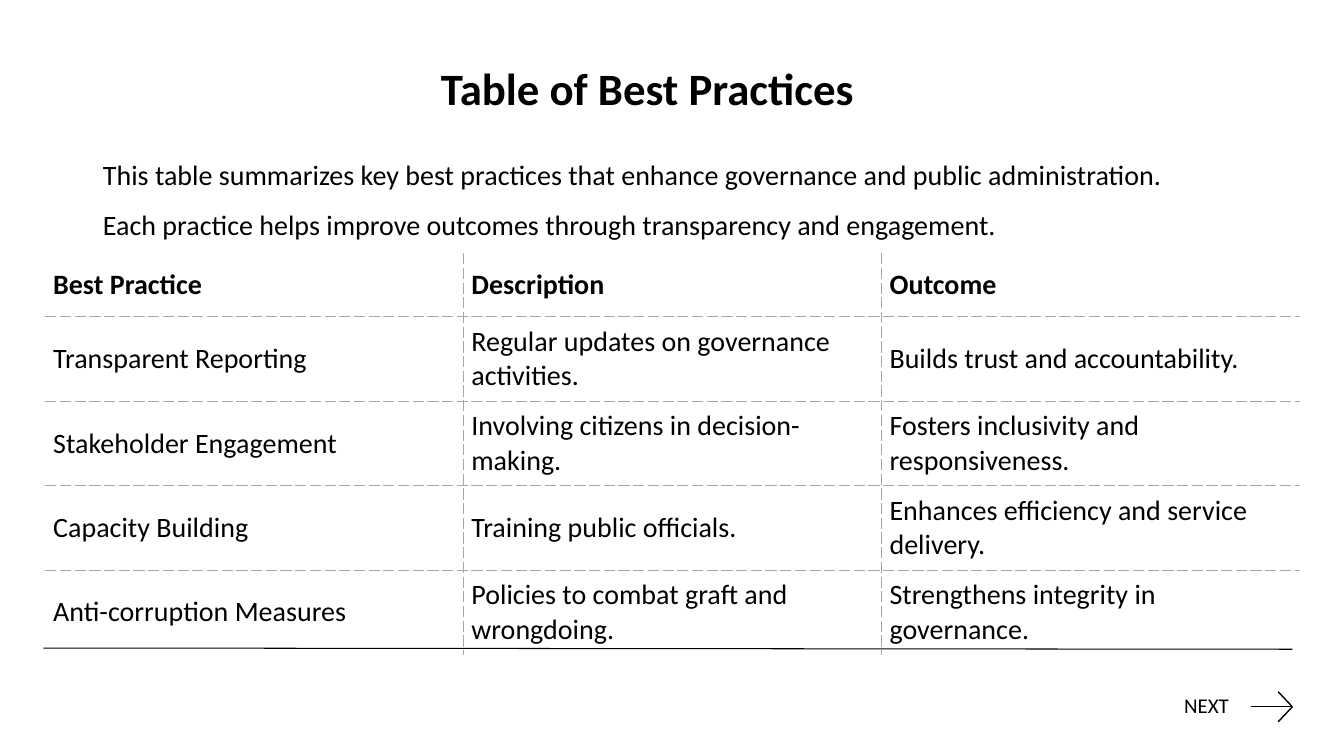
from lxml.etree import SubElement
from pptx import Presentation
from pptx.dml.color import RGBColor
from pptx.enum.shapes import MSO_CONNECTOR
from pptx.enum.text import MSO_ANCHOR, MSO_AUTO_SIZE, PP_ALIGN
from pptx.oxml.ns import qn
from pptx.util import Cm, Pt

BLACK = RGBColor(0x00, 0x00, 0x00)
GREY = RGBColor(0xA6, 0xA6, 0xA6)
FONT = "Calibri"

TITLE = "Table of Best Practices"
INTRODUCTION = [
    "This table summarizes key best practices that enhance governance and public administration.",
    "Each practice helps improve outcomes through transparency and engagement.",
]
PRACTICES = [
    ("Best Practice", "Description", "Outcome"),
    ("Transparent Reporting", "Regular updates on governance activities.",
     "Builds trust and accountability."),
    ("Stakeholder Engagement", "Involving citizens in decision-making.",
     "Fosters inclusivity and responsiveness."),
    ("Capacity Building", "Training public officials.",
     "Enhances efficiency and service delivery."),
    ("Anti-corruption Measures", "Policies to combat graft and wrongdoing.",
     "Strengthens integrity in governance."),
]
COLUMN_WIDTH = Cm(10.54)
HEADER_HEIGHT = Cm(1.6)
ROW_HEIGHT = Cm(2.11)
CELL_MARGIN = Cm(0.2)


def format_text(text_frame, size, bold=False):
    for paragraph in text_frame.paragraphs:
        for run in paragraph.runs:
            run.font.name = FONT
            run.font.size = Pt(size)
            run.font.bold = bold
            run.font.color.rgb = BLACK


def place(shape, left, top, width, height):
    shape.left, shape.top = Cm(left), Cm(top)
    shape.width, shape.height = Cm(width), Cm(height)


def fill_title(slide):
    title = slide.shapes.title
    place(title, 10.21, 1.4, 12.22, 1.85)
    text_frame = title.text_frame
    text_frame.text = TITLE
    text_frame.auto_size = MSO_AUTO_SIZE.NONE
    text_frame.vertical_anchor = MSO_ANCHOR.TOP
    text_frame.paragraphs[0].alignment = PP_ALIGN.CENTER
    format_text(text_frame, 32, bold=True)


def fill_introduction(slide):
    body = slide.placeholders[1]
    place(body, 2.34, 3.45, 29.49, 2.72)
    text_frame = body.text_frame
    text_frame.text = "\n".join(INTRODUCTION)
    text_frame.auto_size = MSO_AUTO_SIZE.NONE
    text_frame.vertical_anchor = MSO_ANCHOR.MIDDLE
    for paragraph in text_frame.paragraphs:
        paragraph.line_spacing = 1.5
        paragraph.space_before = Pt(0)
        # Plain lines without bullet or indent
        properties = paragraph._p.get_or_add_pPr()
        properties.set("marL", "0")
        properties.set("indent", "0")
        SubElement(properties, qn("a:buNone"))
    format_text(text_frame, 20)


def add_border(cell, side, visible):
    border = SubElement(cell._tc.get_or_add_tcPr(), qn(f"a:ln{side}"))
    if not visible:
        SubElement(border, qn("a:noFill"))
        return
    border.set("w", str(Pt(1)))
    fill = SubElement(border, qn("a:solidFill"))
    SubElement(fill, qn("a:srgbClr")).set("val", str(GREY))
    SubElement(border, qn("a:prstDash")).set("val", "sysDash")


def format_cell(cell, text, inner_sides, bold):
    cell.text = text
    cell.vertical_anchor = MSO_ANCHOR.MIDDLE
    cell.margin_left = cell.margin_right = CELL_MARGIN
    cell.margin_top = cell.margin_bottom = CELL_MARGIN
    format_text(cell.text_frame, 20, bold)
    for side, visible in inner_sides.items():
        add_border(cell, side, visible)
    cell.fill.background()


def add_practice_table(slide):
    last_row, last_column = len(PRACTICES) - 1, len(PRACTICES[0]) - 1
    table = slide.shapes.add_table(
        last_row + 1, last_column + 1, Cm(1.14), Cm(6.38),
        COLUMN_WIDTH * (last_column + 1), HEADER_HEIGHT + ROW_HEIGHT * last_row).table
    table.first_row = table.horz_banding = False
    for column in table.columns:
        column.width = COLUMN_WIDTH
    for r, practice in enumerate(PRACTICES):
        table.rows[r].height = ROW_HEIGHT if r else HEADER_HEIGHT
        for c, text in enumerate(practice):
            # Only the inner grid lines are drawn
            inner_sides = {"L": c > 0, "R": c < last_column,
                           "T": r > 0, "B": r < last_row}
            format_cell(table.cell(r, c), text, inner_sides, bold=r == 0)


def add_line(slide, start, end, width):
    line = slide.shapes.add_connector(
        MSO_CONNECTOR.STRAIGHT, *map(Cm, start), *map(Cm, end))
    line.line.color.rgb = BLACK
    line.line.width = Pt(width)
    SubElement(line._element.spPr, qn("a:effectLst"))


def add_next_label(slide):
    label = slide.shapes.add_textbox(Cm(29.74), Cm(17.4), Cm(2.11), Cm(0.84))
    text_frame = label.text_frame
    text_frame.word_wrap = True
    text_frame.margin_left = text_frame.margin_right = Cm(0.1)
    text_frame.text = "NEXT"
    paragraph = text_frame.paragraphs[0]
    paragraph.line_spacing = 0.9
    paragraph.space_before = Pt(6)
    format_text(text_frame, 15)


def add_next_arrow(slide):
    tip = (32.57, 17.81)
    add_line(slide, (31.52, 17.81), tip, 1)
    for rise in (-0.38, 0.38):
        add_line(slide, (32.21, 17.81 + rise), tip, 1)


def main():
    presentation = Presentation()
    presentation.slide_width, presentation.slide_height = Cm(33.87), Cm(19.05)
    slide = presentation.slides.add_slide(presentation.slide_layouts[1])

    # Heading and introduction
    fill_title(slide)
    fill_introduction(slide)

    # Table and its closing rule
    add_practice_table(slide)
    add_line(slide, (1.09, 16.33), (32.57, 16.36), 0.75)

    # Pointer to the next slide
    add_next_label(slide)
    add_next_arrow(slide)

    presentation.save("out.pptx")


if __name__ == "__main__":
    main()
